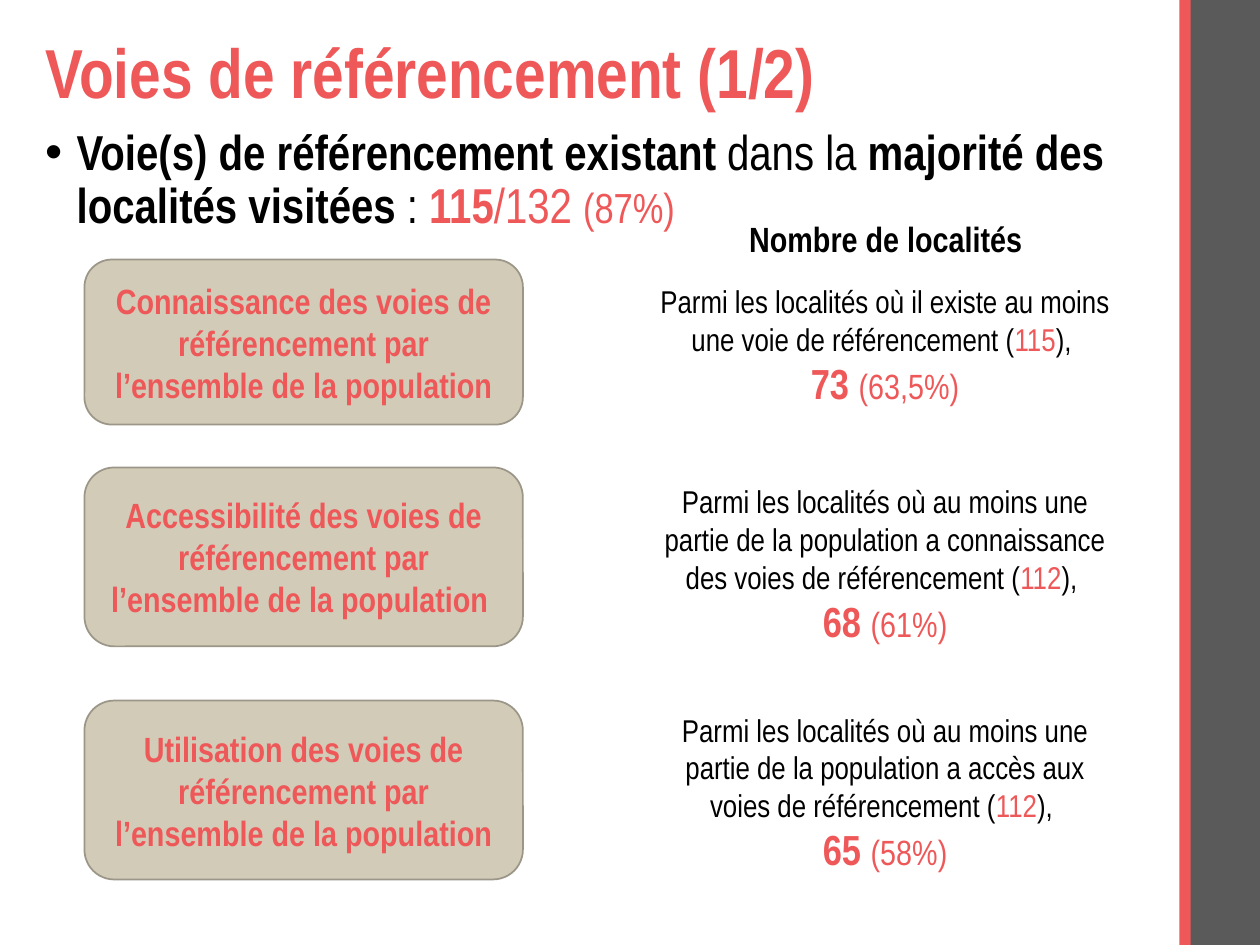
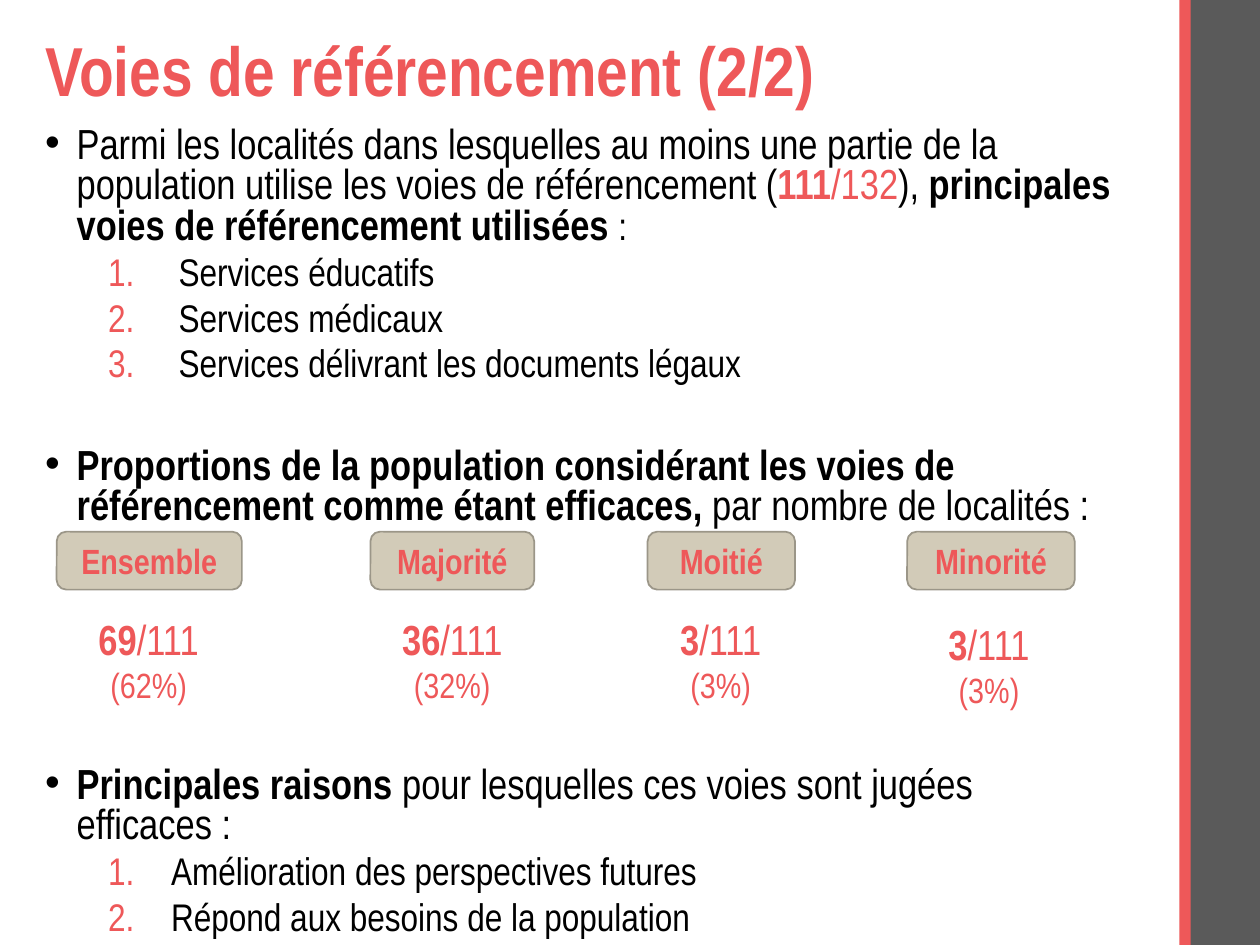
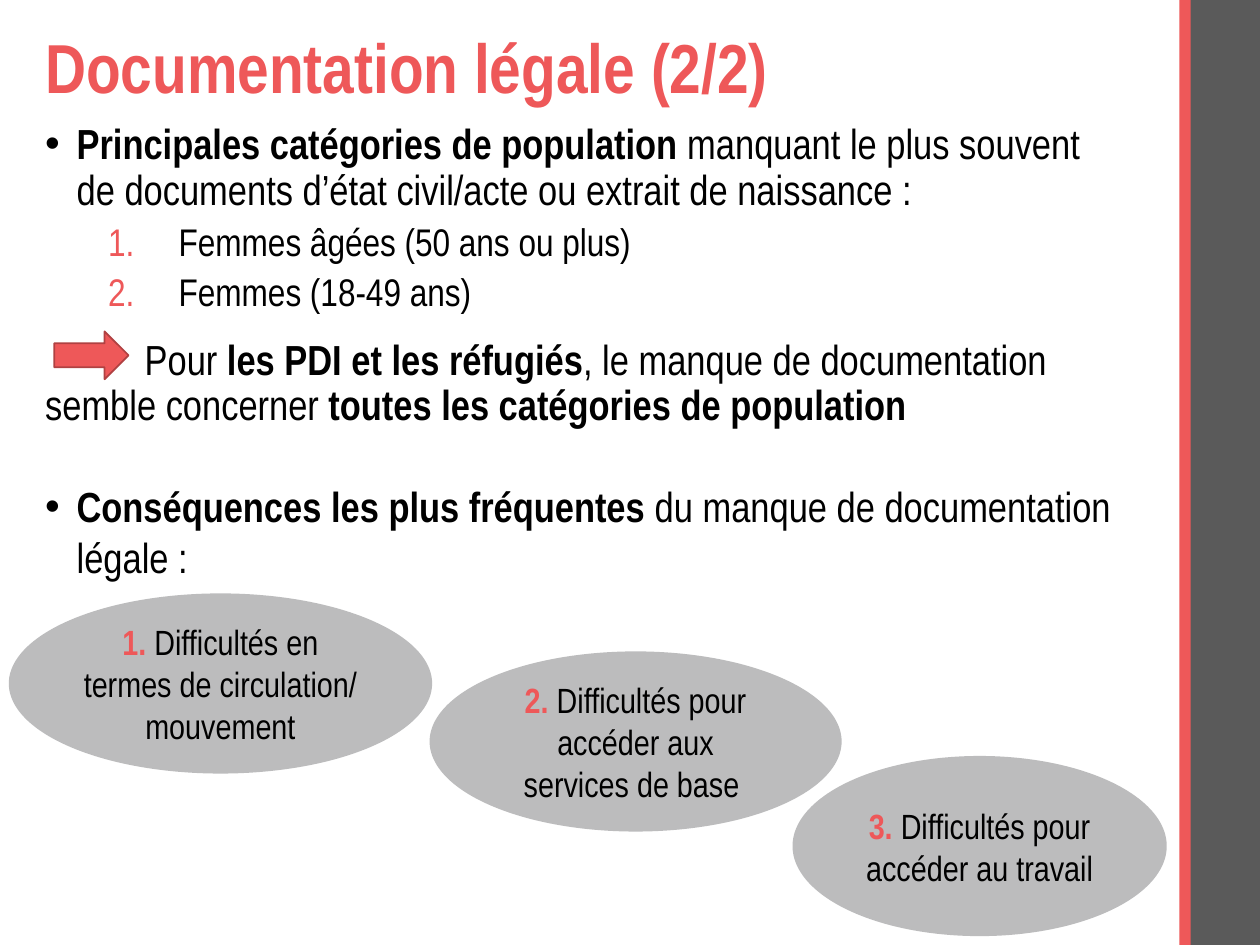
from dataclasses import dataclass

from lxml import etree
from pptx import Presentation
from pptx import util as u
from pptx.dml.color import RGBColor
from pptx.enum import shapes, text
from pptx.oxml.ns import qn


@dataclass(frozen=True)
class Theme:
    font: str = "Arial Narrow"
    red: str = "EE5859"
    dark_red: str = "B04142"
    black: str = "000000"
    grey: str = "5A5A5A"
    light_grey: str = "BCBCBD"
    beige: str = "D2CBB8"
    taupe: str = "9B9688"
    title: float = 39.6
    lead: int = 28
    body: int = 24
    item: int = 22
    label: int = 20
    note: int = 18


theme = Theme()
CENTER = text.PP_ALIGN.CENTER
LEFT = text.PP_ALIGN.LEFT
INDENTS = {
    "plain": (0, 0),
    "arrow": (0, 0.79),
    "bullet": (0.25, -0.25),
    "number": (1.06, -0.56),
    "short number": (1, -0.5),
}


def write(shape, paragraphs, align=CENTER, line_spacing=1.0):
    frame = shape.text_frame
    frame.word_wrap = True
    for index, (kind, before, runs) in enumerate(paragraphs):
        paragraph = frame.add_paragraph() if index else frame.paragraphs[0]
        properties = paragraph._p.get_or_add_pPr()
        margin, indent = INDENTS[kind]
        properties.set("marL", str(u.Inches(margin)))
        properties.set("indent", str(u.Inches(indent)))
        if kind == "bullet":
            etree.SubElement(properties, qn("a:buFont")).set("typeface", "Arial")
            etree.SubElement(properties, qn("a:buChar")).set("char", "•")
        elif "number" in kind:
            paragraph.level = 1
            color = etree.SubElement(properties, qn("a:buClr"))
            etree.SubElement(color, qn("a:srgbClr")).set("val", theme.red)
            etree.SubElement(properties, qn("a:buAutoNum")).set("type", "arabicPeriod")
        else:
            etree.SubElement(properties, qn("a:buNone"))
        paragraph.alignment = align
        paragraph.line_spacing = line_spacing
        paragraph.space_before = u.Pt(before)
        for words, size, style in runs:
            run = paragraph.add_run()
            run.text = words
            run.font.name = theme.font
            run.font.size = u.Pt(size)
            run.font.bold = "bold" in style
            run.font.color.rgb = RGBColor.from_string(theme.red if "red" in style else theme.black)


def add_shape(slide, preset, box, fill, line=None):
    shape = slide.shapes.add_shape(preset, *map(u.Inches, box))
    shape.shadow.inherit = False
    shape.fill.solid()
    shape.fill.fore_color.rgb = RGBColor.from_string(fill)
    if line:
        shape.line.color.rgb = RGBColor.from_string(line)
        shape.line.width = u.Pt(1)
    else:
        shape.line.fill.background()
    shape.text_frame.vertical_anchor = text.MSO_ANCHOR.MIDDLE
    return shape


presentation = Presentation()
presentation.slide_width = u.Inches(10)
presentation.slide_height = u.Inches(7.5)
layout = presentation.slide_layouts[5]

slides = []
bodies = []
for title, top, body_height in [
    ("Voies de référencement (1/2)", 0.23, 6.53),
    ("Voies de référencement (2/2)", 0.22, 6.55),
    ("Documentation légale (2/2)", 0.19, 5.55),
]:
    slide = presentation.slides.add_slide(layout)
    heading = slide.shapes.title
    heading.left, heading.top, heading.width, heading.height = map(u.Inches, (0.26, top, 8.69, 0.74))
    heading.text_frame.vertical_anchor = text.MSO_ANCHOR.MIDDLE
    heading.text_frame.auto_size = text.MSO_AUTO_SIZE.NONE
    write(heading, [("plain", 0, [(title, theme.title, "bold red")])], LEFT, 0.9)
    slides.append(slide)
    bodies.append(slide.shapes.add_textbox(*map(u.Inches, (0.26, top + 0.74, 8.69, body_height))))

for number, (left, width, fill) in enumerate([(9.44, 0.56, theme.grey), (9.36, 0.09, theme.red)]):
    band = add_shape(slides[0], shapes.MSO_SHAPE.RECTANGLE, (left, 0, width, 7.5), fill)
    band.name = f"Band {number + 1}"
    band.element.nvSpPr.cNvPr.set("id", str(100 + number))
    layout.shapes.element.append(band.element)

slide = slides[0]
write(bodies[0], [
    ("bullet", 0, [
        ("Voie(s) de référencement existant ", theme.lead, "bold"),
        ("dans la ", theme.lead, ""),
        ("majorité des localités visitées ", theme.lead, "bold"),
        (": ", theme.lead, ""),
        ("115", theme.lead, "bold red"),
        ("/132 ", theme.lead, "red"),
        ("(87%)", theme.body, "red"),
    ]),
], LEFT, 0.9)

column_head = slide.shapes.add_textbox(*map(u.Inches, (5.84, 1.68, 2.38, 0.44)))
write(column_head, [("plain", 0, [("Nombre de localités", theme.label, "bold")])])
column_head.text_frame.word_wrap = False

for label, top, height, note_top, note_height, context, base, count, share in [
    ("Connaissance des voies de référencement par l’ensemble de la population", 2.06, 1.31, 2.19, 1.11,
     "Parmi les localités où il existe au moins une voie de référencement (", "115", "73 ", "(63,5%)"),
    ("Accessibilité des voies de référencement par l’ensemble de la population ", 3.71, 1.42, 3.78, 1.41,
     "Parmi les localités où au moins une partie de la population a connaissance des voies de référencement (",
     "112", "68 ", "(61%)"),
    ("Utilisation des voies de référencement par l’ensemble de la population", 5.56, 1.42, 5.59, 1.41,
     "Parmi les localités où au moins une partie de la population a accès aux voies de référencement (",
     "112", "65 ", "(58%)"),
]:
    card = add_shape(slide, shapes.MSO_SHAPE.ROUNDED_RECTANGLE, (0.67, top, 3.48, height), theme.beige, theme.taupe)
    write(card, [("plain", 0, [(label, theme.label, "bold red")])])
    note = slide.shapes.add_textbox(*map(u.Inches, (5.11, note_top, 3.83, note_height)))
    write(note, [
        ("plain", 0, [(context, theme.note, ""), (base, theme.note, "red"), ("), ", theme.note, "")]),
        ("plain", 0, [(count, theme.body, "bold red"), (share, theme.label, "red")]),
    ])

slide = slides[1]
write(bodies[1], [
    ("bullet", 0, [
        ("Parmi les localités dans lesquelles au moins une partie de la population utilise les voies de "
         "référencement (", theme.body, ""),
        ("111", theme.body, "bold red"),
        ("/132", theme.body, "red"),
        ("), ", theme.body, ""),
        ("principales voies de référencement utilisées ", theme.body, "bold"),
        (":", theme.item, ""),
    ]),
    ("number", 5, [("Services éducatifs", theme.item, "")]),
    ("number", 5, [("Services médicaux", theme.item, "")]),
    ("number", 5, [("Services délivrant les documents légaux", theme.item, "")]),
    ("bullet", 36, [
        ("Proportions de la population considérant les voies de référencement comme étant efficaces, ",
         theme.body, "bold"),
        ("par nombre de localités :", theme.body, ""),
    ]),
    ("bullet", 136, [
        ("Principales raisons ", theme.body, "bold"),
        ("pour lesquelles ces voies sont jugées efficaces :", theme.body, ""),
    ]),
    ("short number", 5, [("Amélioration des perspectives futures", theme.item, "")]),
    ("short number", 5, [("Répond aux besoins de la population", theme.item, "")]),
], LEFT, 0.8)

for label, left, width, count_left, count_top, count, share in [
    ("Ensemble", 0.45, 1.47, 0.65, 4.82, "69", "(62%)"),
    ("Majorité", 2.94, 1.3, 3.06, 4.82, "36", "(32%)"),
    ("Moitié", 5.14, 1.17, 5.19, 4.82, "3", "(3%)"),
    ("Minorité", 7.2, 1.33, 7.32, 4.86, "3", "(3%)"),
]:
    tag = add_shape(slide, shapes.MSO_SHAPE.ROUNDED_RECTANGLE, (left, 4.22, width, 0.46), theme.beige, theme.taupe)
    write(tag, [("plain", 0, [(label, theme.label, "bold red")])])
    result = slide.shapes.add_textbox(*map(u.Inches, (count_left, count_top, 1.06, 0.84)))
    write(result, [
        ("plain", 0, [(count, theme.body, "bold red"), ("/111", theme.body, "red")]),
        ("plain", 0, [(share, theme.label, "red")]),
    ])

slide = slides[2]
write(bodies[2], [
    ("bullet", 0, [
        ("Principales catégories de population ", theme.body, "bold"),
        ("manquant le plus souvent de documents d’état civil/acte ou extrait de naissance :", theme.body, ""),
    ]),
    ("number", 5, [("Femmes âgées (50 ans ou plus)", theme.item, "")]),
    ("number", 5, [("Femmes (18-49 ans)", theme.item, "")]),
    ("arrow", 14, [
        ("Pour ", theme.body, ""),
        ("les PDI et les réfugiés", theme.body, "bold"),
        (", le manque de documentation semble concerner ", theme.body, ""),
        ("toutes les catégories de population", theme.body, "bold"),
    ]),
    ("bullet", 29, [
        ("Conséquences les plus fréquentes ", theme.body, "bold"),
        ("du manque de documentation légale :", theme.body, ""),
    ]),
], LEFT, 0.9)
bodies[2].text_frame.paragraphs[-1].line_spacing = 1.0

add_shape(slide, shapes.MSO_SHAPE.RIGHT_ARROW, (0.43, 2.63, 0.59, 0.38), theme.red, theme.dark_red)

for rank, (consequence, left, top, width) in enumerate([
    ("Difficultés en termes de circulation/ mouvement", 0.07, 4.71, 3.36),
    ("Difficultés pour accéder aux services de base ", 3.41, 5.17, 3.27),
    ("Difficultés pour accéder au travail", 6.29, 6, 2.97),
], start=1):
    bubble = add_shape(slide, shapes.MSO_SHAPE.OVAL, (left, top, width, 1.43), theme.light_grey)
    write(bubble, [("plain", 0, [(f"{rank}. ", theme.label, "bold red"), (consequence, theme.label, "")])])

presentation.save("out.pptx")
